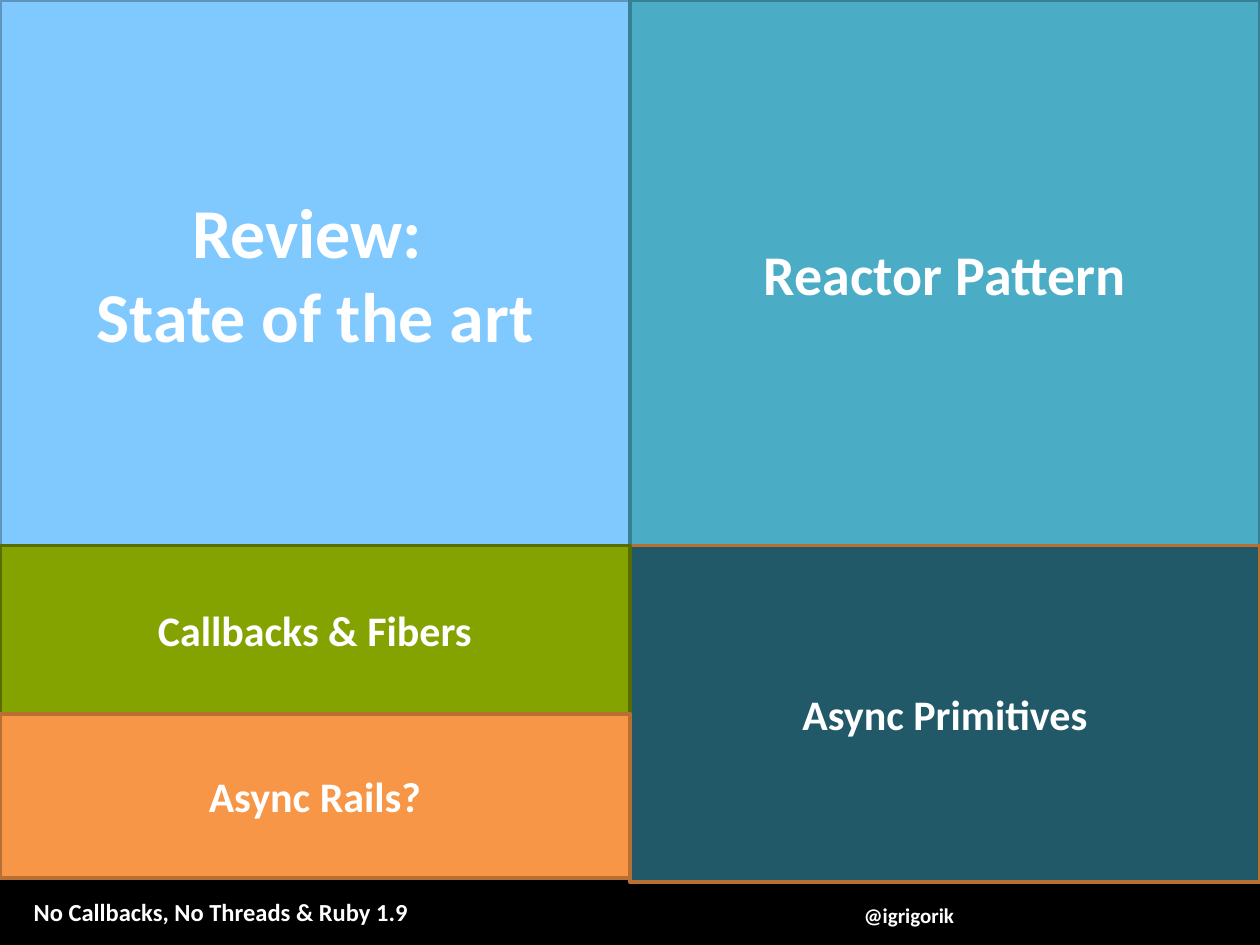
import dataclasses

import pptx
import pptx.dml.color
import pptx.enum.shapes
import pptx.enum.text
import pptx.util

Cm = pptx.util.Cm
Alignment = pptx.enum.text.PP_ALIGN
Anchor = pptx.enum.text.MSO_ANCHOR


@dataclasses.dataclass(frozen=True)
class Theme:
    font: str = "Calibri"
    background: str = "5F6062"
    text: str = "FFFFFF"
    footer: str = "000000"
    sky: str = "80C9FF"
    sky_edge: str = "5F95BD"
    teal: str = "4BACC6"
    teal_edge: str = "377F92"
    petrol: str = "215968"
    green: str = "85A300"
    green_edge: str = "596C00"
    orange: str = "F79646"
    orange_edge: str = "B76F34"
    line_width: int = 2
    title_size: int = 40
    heading_size: int = 32
    topic_size: int = 24
    footer_size: int = 14
    handle_size: int = 12


class SlideBuilder:
    def __init__(self, presentation, theme):
        self.theme = theme
        self.slide = presentation.slides.add_slide(presentation.slide_layouts[5])
        self.paint(self.slide.background.fill, theme.background)

    def paint(self, fill, color):
        fill.solid()
        fill.fore_color.rgb = pptx.dml.color.RGBColor.from_string(color)

    def decorate(self, shape, fill, edge):
        self.paint(shape.fill, fill)
        self.paint(shape.line.fill, edge)
        shape.line.width = pptx.util.Pt(self.theme.line_width)

    def add_lines(self, shape, lines, size, alignment, anchor):
        frame = shape.text_frame
        frame.word_wrap = True
        frame.auto_size = pptx.enum.text.MSO_AUTO_SIZE.NONE
        frame.vertical_anchor = anchor
        for index, line in enumerate(lines):
            paragraph = frame.add_paragraph() if index else frame.paragraphs[0]
            paragraph.alignment = alignment
            run = paragraph.add_run()
            run.text = line
            run.font.name = self.theme.font
            run.font.size = pptx.util.Pt(size)
            run.font.bold = True
            run.font.color.rgb = pptx.dml.color.RGBColor.from_string(self.theme.text)

    def title(self, box, lines, size, fill, edge):
        shape = self.slide.shapes.title
        shape.left, shape.top, shape.width, shape.height = map(Cm, box)
        self.decorate(shape, fill, edge)
        self.add_lines(shape, lines, size, Alignment.CENTER, Anchor.MIDDLE)

    def rectangle(self, box, fill, edge):
        shape = self.slide.shapes.add_shape(
            pptx.enum.shapes.MSO_SHAPE.RECTANGLE, *map(Cm, box)
        )
        shape.shadow.inherit = False
        self.decorate(shape, fill, edge)
        return shape

    def tile(self, box, text, size, fill, edge):
        shape = self.rectangle(box, fill, edge)
        self.add_lines(shape, [text], size, Alignment.CENTER, Anchor.MIDDLE)

    def label(self, box, text, size, alignment):
        shape = self.slide.shapes.add_textbox(*map(Cm, box))
        self.add_lines(shape, [text], size, alignment, Anchor.TOP)


def main():
    theme = Theme()
    width, height = 25.4, 19.05
    half = width / 2
    top_row = 11
    short_row = 3.39
    footer_top = 17.7

    presentation = pptx.Presentation()
    presentation.slide_width = Cm(width)
    presentation.slide_height = Cm(height)
    builder = SlideBuilder(presentation, theme)

    builder.rectangle(
        (0, footer_top, width, height - footer_top), theme.footer, theme.footer
    )
    builder.label(
        (0.43, 17.96, 9.98, 0.86),
        "No Callbacks, No Threads & Ruby 1.9",
        theme.footer_size,
        Alignment.LEFT,
    )
    builder.label(
        (15.77, 18.06, 5.11, 0.76), "@igrigorik", theme.handle_size, Alignment.CENTER
    )

    builder.title(
        (0, 0, half, top_row),
        ["Review: ", "State of the art"],
        theme.title_size,
        theme.sky,
        theme.sky_edge,
    )
    rails_top = top_row + short_row
    tiles = [
        ((half, 0, half, top_row), "Reactor Pattern",
         theme.heading_size, theme.teal, theme.teal_edge),
        ((half, top_row, half, 2 * short_row), "Async Primitives",
         theme.topic_size, theme.petrol, theme.orange_edge),
        ((0, top_row, half, short_row), "Callbacks & Fibers",
         theme.topic_size, theme.green, theme.green_edge),
        ((0, rails_top, half, footer_top - rails_top), "Async Rails?",
         theme.topic_size, theme.orange, theme.orange_edge),
    ]
    for tile in tiles:
        builder.tile(*tile)

    presentation.save("out.pptx")


if __name__ == "__main__":
    main()
